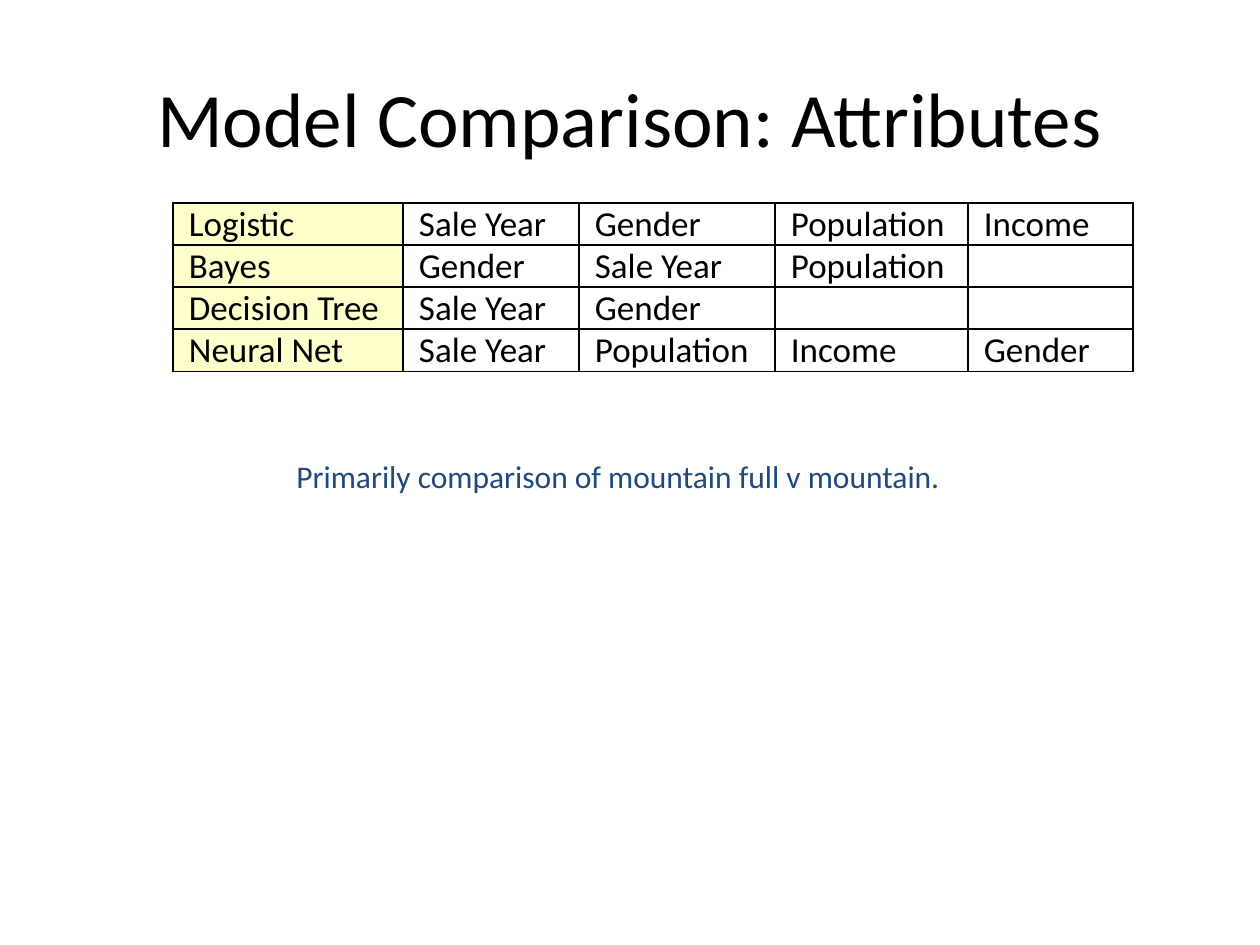
from lxml.etree import SubElement
from pptx import Presentation
from pptx.dml.color import RGBColor as Rgb
from pptx.enum.text import MSO_ANCHOR as Anchor, PP_ALIGN as Align
from pptx.oxml.ns import qn
from pptx.util import Pt

EMU_PER_PX = 914400 / 126
COLORS = {"ink": "000000", "note": "1F497D", "label": "FFFFCC"}
MODELS = [
    ["Logistic", "Sale Year", "Gender", "Population", "Income"],
    ["Bayes", "Gender", "Sale Year", "Population", ""],
    ["Decision Tree", "Sale Year", "Gender", "", ""],
    ["Neural Net", "Sale Year", "Population", "Income", "Gender"],
]
COLUMN_WIDTHS = [230, 176, 196, 193, 165]
ROW_HEIGHT = 42


def px(length):
    return round(length * EMU_PER_PX)


def set_all(target, values):
    for name, value in values.items():
        setattr(target, name, value)


class SlideBuilder:
    font = "Calibri"
    border = Pt(1)
    cell_format = {"margin_left": px(16), "margin_right": px(16),
                   "margin_top": 0, "margin_bottom": 0}

    def __init__(self, page):
        self.page = page

    def add_span(self, para, text, size, color="ink"):
        span = para.add_run()
        span.text = text
        set_all(span.font, {"name": self.font, "size": Pt(size)})
        span.font.color.rgb = Rgb.from_string(COLORS[color])

    def text(self, text, area, size, color="ink", align=Align.LEFT, **frame_format):
        box = self.page.shapes.add_textbox(*map(px, area))
        set_all(box.text_frame, frame_format)
        para = box.text_frame.paragraphs[0]
        para.alignment = align
        self.add_span(para, text, size, color)

    def outline(self, cell):
        properties = cell._tc.get_or_add_tcPr()
        for side in ("lnL", "lnR", "lnT", "lnB"):
            line = SubElement(properties, qn(f"a:{side}"), w=str(self.border))
            fill = SubElement(line, qn("a:solidFill"))
            SubElement(fill, qn("a:srgbClr"), val=COLORS["ink"])

    def table(self, rows, left, top, widths, row_height, size):
        area = (left, top, sum(widths), row_height * len(rows))
        table = self.page.shapes.add_table(
            len(rows), len(widths), *map(px, area)).table
        set_all(table, {"first_row": False, "horz_banding": False})
        for column, width in zip(table.columns, widths):
            column.width = px(width)
        for row, texts in zip(table.rows, rows):
            row.height = px(row_height)
            for index, (cell, text) in enumerate(zip(row.cells, texts)):
                set_all(cell, self.cell_format)
                self.outline(cell)
                if index == 0:
                    cell.fill.solid()
                    cell.fill.fore_color.rgb = Rgb.from_string(COLORS["label"])
                else:
                    cell.fill.background()
                if text:
                    self.add_span(cell.text_frame.paragraphs[0], text, size)


def main():
    deck = Presentation()
    set_all(deck, {"slide_width": px(1260), "slide_height": px(945)})
    builder = SlideBuilder(deck.slides.add_slide(deck.slide_layouts[6]))
    builder.text("Model Comparison: Attributes", (63, 38, 1134, 157), 44,
                 align=Align.CENTER, word_wrap=True, vertical_anchor=Anchor.MIDDLE)
    builder.text("Primarily comparison of mountain full v mountain.",
                 (284, 451, 677, 50), 18, "note", word_wrap=False)
    builder.table(MODELS, 173, 203, COLUMN_WIDTHS, ROW_HEIGHT, 20)
    deck.save("out.pptx")


if __name__ == "__main__":
    main()
